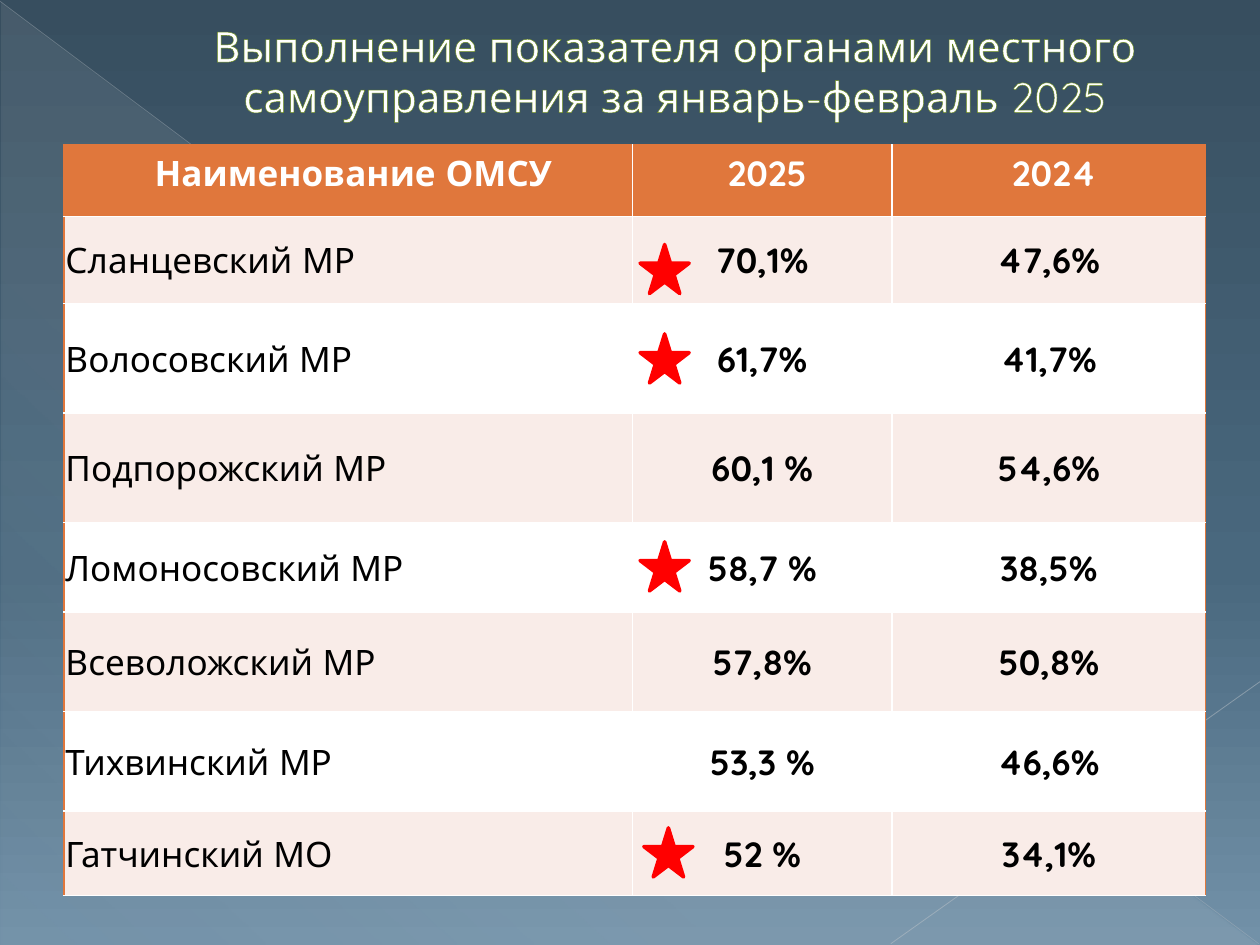
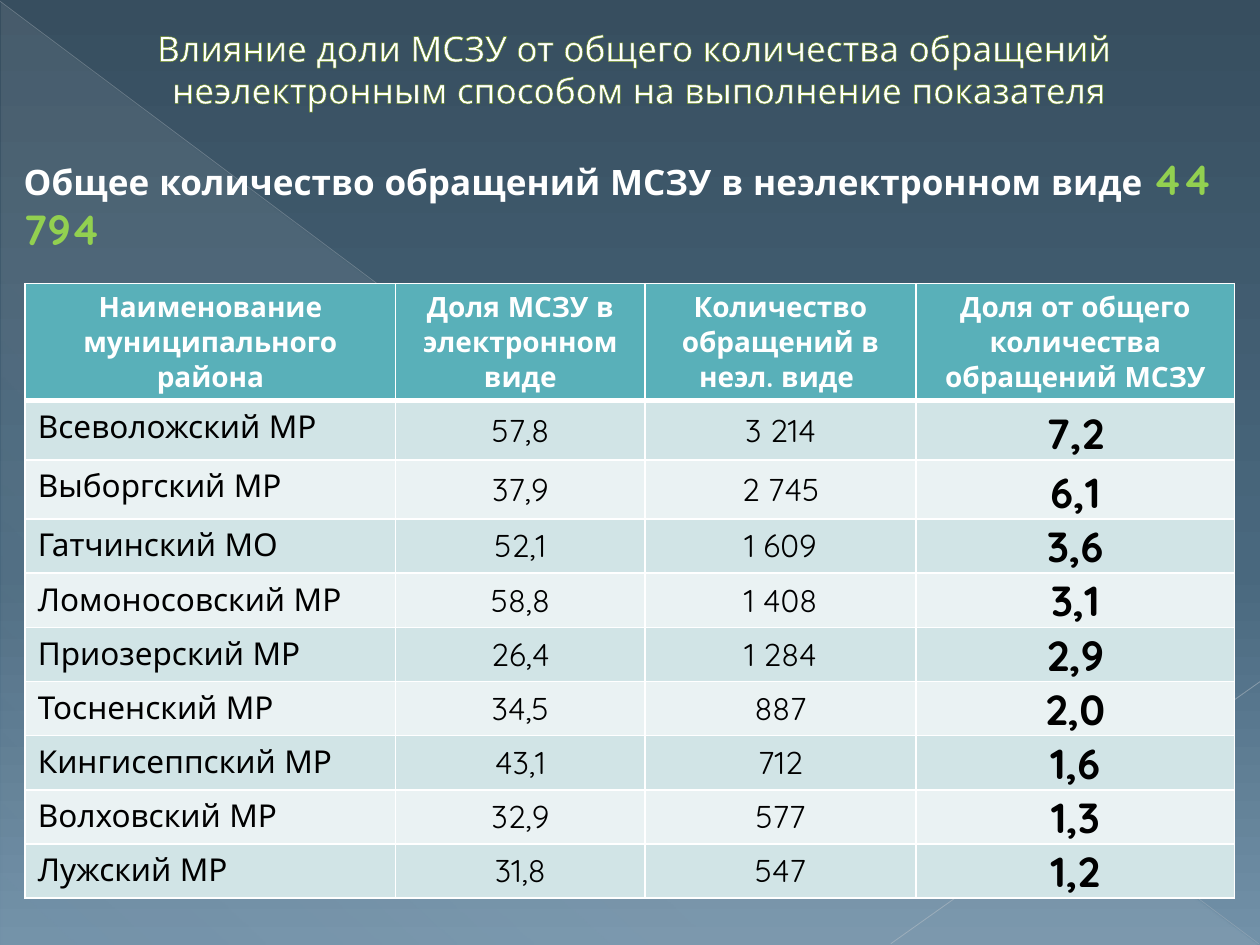
from collections import namedtuple

from lxml import etree
from pptx import Presentation
from pptx.dml.color import RGBColor
from pptx.enum import shapes, text
from pptx.oxml import parse_xml
from pptx.oxml.ns import nsdecls, qn
from pptx.util import Inches, Pt

FONT = "Quicksand"
WHITE = RGBColor(0xFF, 0xFF, 0xFF)
BLACK = RGBColor(0x00, 0x00, 0x00)
RED = RGBColor(0xFF, 0x00, 0x00)
LIME = RGBColor(0x92, 0xD0, 0x50)
OLIVE = RGBColor(0x69, 0x8A, 0x18)
ORANGE = RGBColor(0xE0, 0x77, 0x3C)
BLUSH = RGBColor(0xF9, 0xEC, 0xE8)
TEAL = RGBColor(0x59, 0xB0, 0xB9)
TEAL_MID = RGBColor(0xD1, 0xE4, 0xE6)
TEAL_PALE = RGBColor(0xEA, 0xF2, 0xF3)
NAVY = RGBColor(0x37, 0x4E, 0x5F)
STEEL = RGBColor(0x49, 0x68, 0x7E)
SKY = RGBColor(0x72, 0x91, 0xA8)
MIST = RGBColor(0xE7, 0xEC, 0xED)
RAY_LONG = RGBColor(0xBA, 0xC0, 0xC6)
RAY_SHORT = RGBColor(0xC2, 0xC7, 0xCC)

LEFT, CENTER = text.PP_ALIGN.LEFT, text.PP_ALIGN.CENTER
TOP, MIDDLE, BOTTOM = (text.MSO_ANCHOR.TOP, text.MSO_ANCHOR.MIDDLE,
                       text.MSO_ANCHOR.BOTTOM)

# How the body cells of one column look
Column = namedtuple("Column", "width align anchor size bold tight")


class Deck:
    def __init__(self):
        self.presentation = Presentation()
        self.presentation.slide_width = Inches(10)
        self.presentation.slide_height = Inches(7.5)
        self.slide = None

    def new_slide(self):
        layout = self.presentation.slide_layouts.get_by_name("Title Only")
        self.slide = self.presentation.slides.add_slide(layout)

    # Colour helpers
    def set_gradient(self, fill, stops, angle):
        """Each stop is (position %, colour, opacity %)."""
        fill.gradient()
        fill.gradient_angle = 0
        gradient = fill._fill._gradFill
        stop_list = gradient.find(qn("a:gsLst"))
        for old_stop in list(stop_list):
            stop_list.remove(old_stop)
        for position, color, opacity in stops:
            stop_list.append(parse_xml(
                f'<a:gs {nsdecls("a")} pos="{position * 1000}"><a:srgbClr val="{color}">'
                f'<a:alpha val="{opacity * 1000}"/></a:srgbClr></a:gs>'))
        gradient.find(qn("a:lin")).set("ang", str(angle * 60000))

    def set_font(self, font, size, color, bold=False):
        font.name, font.size, font.bold = FONT, Pt(size), bold
        font.color.rgb = color

    # Master: background, corner triangle and rays
    def decorate_master(self):
        master = self.presentation.slide_master
        self.set_gradient(master.background.fill,
                          [(0, NAVY, 100), (60, STEEL, 100), (100, SKY, 100)], 90)
        triangle = self.slide.shapes.add_shape(
            shapes.MSO_SHAPE.RIGHT_TRIANGLE, Inches(0.01), Inches(0.02),
            Inches(9.98), Inches(7.48))
        triangle.shadow.inherit = False
        triangle.line.fill.background()
        self.set_gradient(triangle.fill, [(0, MIST, 10), (70, MIST, 8), (100, MIST, 1)], 133)
        decorations = [
            triangle,
            self.ray((0, 0.01), (9.99, 7.49), RAY_LONG, 0.39, 35),
            self.ray((10, 5.41), (7.07, 7.49), RAY_SHORT, 0.47, 45),
        ]
        tree = master.shapes.element
        for number, shape in enumerate(decorations):
            shape.element.xpath(".//p:cNvPr")[0].set("id", str(100 + number))
            tree.insert(2 + number, shape.element)

    def ray(self, start, end, color, width, opacity):
        line = self.slide.shapes.add_connector(
            shapes.MSO_CONNECTOR.STRAIGHT, *(Inches(value) for value in start + end))
        line.line.color.rgb = color
        line.line.width = Pt(width)
        solid_color = line.element.spPr.find(".//" + qn("a:srgbClr"))
        etree.SubElement(solid_color, qn("a:alpha"), val=str(opacity * 1000))
        etree.SubElement(line.element.spPr, qn("a:effectLst"))
        return line

    # Text
    def title(self, words, left, top, width, height, size):
        shape = self.slide.shapes.title
        shape.left, shape.top = Inches(left), Inches(top)
        shape.width, shape.height = Inches(width), Inches(height)
        frame = shape.text_frame
        frame.text = words
        frame.auto_size = text.MSO_AUTO_SIZE.NONE
        frame.vertical_anchor = MIDDLE
        paragraph = frame.paragraphs[0]
        paragraph.alignment = CENTER
        paragraph._p.get_or_add_pPr().set("marL", str(Inches(0.53)))
        for run in paragraph.runs:
            self.set_font(run.font, size, WHITE)
            run._r.get_or_add_rPr().insert(0, parse_xml(
                f'<a:ln {nsdecls("a")} w="{Pt(0.5)}"><a:solidFill>'
                f'<a:srgbClr val="{OLIVE}"/></a:solidFill></a:ln>'))

    def text_line(self, runs, left, top, width, height):
        box = self.slide.shapes.add_textbox(
            Inches(left), Inches(top), Inches(width), Inches(height))
        box.text_frame.word_wrap = True
        paragraph = box.text_frame.paragraphs[0]
        for words, size, color in runs:
            run = paragraph.add_run()
            run.text = words
            self.set_font(run.font, size, color, bold=True)

    # Stars
    def star(self, left, top):
        shape = self.slide.shapes.add_shape(
            shapes.MSO_SHAPE.STAR_5_POINT, Inches(left), Inches(top),
            Inches(0.39), Inches(0.39))
        shape.shadow.inherit = False
        shape.fill.solid()
        shape.fill.fore_color.rgb = RED
        shape.line.color.rgb = RED
        shape.line.width = Pt(2)

    # Tables
    def cell(self, cell, words, style, color, fill, borders, indent=0):
        cell.text = words
        cell.vertical_anchor = style.anchor
        if style.tight:
            cell.margin_left = cell.margin_right = cell.margin_top = Inches(0.01)
            cell.margin_bottom = 0
        paragraph = cell.text_frame.paragraphs[0]
        paragraph.alignment = style.align
        if indent:
            paragraph._p.get_or_add_pPr().set("marL", str(Inches(indent)))
        self.set_font(paragraph.font, style.size, color, style.bold)
        for run in paragraph.runs:
            self.set_font(run.font, style.size, color, style.bold)
        cell.fill.solid()
        cell.fill.fore_color.rgb = fill
        for place, side in enumerate("LRTB"):
            edge_color, width = borders.get(side, (WHITE, 1))
            cell._tc.get_or_add_tcPr().insert(place, parse_xml(
                f'<a:ln{side} {nsdecls("a")} w="{Pt(width)}"><a:solidFill>'
                f'<a:srgbClr val="{edge_color}"/></a:solidFill></a:ln{side}>'))

    def table(self, left, top, columns, heights, rows, header_size, header_fill,
              bands, edge=WHITE, header_rule=1, header_indent=0):
        width = sum(column.width for column in columns)
        table = self.slide.shapes.add_table(
            len(rows), len(columns), Inches(left), Inches(top),
            Inches(width), Inches(sum(heights))).table
        table.first_row = table.horz_banding = False
        for column, style in zip(table.columns, columns):
            column.width = Inches(style.width)
        for row, height in zip(table.rows, heights):
            row.height = Inches(height)
        last = len(columns) - 1
        for r, row in enumerate(rows):
            for c, words in enumerate(row):
                borders = {}
                if c == 0:
                    borders["L"] = edge, 1
                if c == last:
                    borders["R"] = edge, 1
                if r == 0:
                    borders.update(T=(edge, 1), B=(WHITE, header_rule))
                    style = Column(None, CENTER, TOP, header_size, True, False)
                    self.cell(table.cell(r, c), words, style, WHITE, header_fill,
                              borders, header_indent)
                else:
                    if r == 1:
                        borders["T"] = WHITE, header_rule
                    self.cell(table.cell(r, c), words, columns[c], BLACK,
                              bands[(r - 1) % 2], borders)


def results_slide(deck):
    deck.title("Выполнение показателя органами местного самоуправления "
               "за январь-февраль 2025", 0.59, -0.19, 9, 1.5, 24)
    rows = [
        ("Наименование ОМСУ", "2025", "2024"),
        ("Сланцевский МР", "70,1%", "47,6%"),
        ("Волосовский МР", "61,7%", "41,7%"),
        ("Подпорожский МР", "60,1 %", "54,6%"),
        ("Ломоносовский МР", "58,7 %", "38,5%"),
        ("Всеволожский МР", "57,8%", "50,8%"),
        ("Тихвинский МР", "53,3 %", "46,6%"),
        ("Гатчинский МО", "52 %", "34,1%"),
    ]
    columns = [Column(4.51, LEFT, MIDDLE, 20, False, True),
               Column(2.06, CENTER, MIDDLE, 20, True, True),
               Column(2.49, CENTER, MIDDLE, 20, True, True)]
    heights = [0.57, 0.69, 0.87, 0.87, 0.71, 0.79, 0.79, 0.67]
    deck.table(0.51, 1.15, columns, heights, rows, 20, ORANGE, (BLUSH, WHITE),
               edge=ORANGE, header_indent=0.08)
    for left, top in [(5.08, 1.94), (5.08, 2.65), (5.08, 4.3), (5.11, 6.57)]:
        deck.star(left, top)


def influence_slide(deck):
    deck.title("Влияние доли МСЗУ от общего количества обращений \v"
               "неэлектронным способом на выполнение показателя",
               0.12, -0.34, 9.37, 1.77, 20)
    deck.text_line([("Общее количество обращений МСЗУ в неэлектронном виде ", 20, WHITE),
                    ("44 794", 24, LIME)], 0.09, 1.17, 10.03, 0.5)
    rows = [
        ("Наименование муниципального района", "Доля МСЗУ в электронном виде",
         "Количество обращений в неэл. виде ", "Доля от общего количества обращений МСЗУ"),
        ("Всеволожский МР", "57,8", "3 214", "7,2"),
        ("Выборгский МР", "37,9", "2 745", "6,1"),
        ("Гатчинский МО", "52,1", "1 609", "3,6"),
        ("Ломоносовский МР", "58,8", "1 408", "3,1"),
        ("Приозерский МР", "26,4", "1 284", "2,9"),
        ("Тосненский МР", "34,5", "887", "2,0"),
        ("Кингисеппский МР", "43,1", "712", "1,6"),
        ("Волховский МР", "32,9", "577", "1,3"),
        ("Лужский МР", "31,8", "547", "1,2"),
    ]
    columns = [Column(2.94, LEFT, TOP, 18, False, False),
               Column(1.98, CENTER, MIDDLE, 18, False, False),
               Column(2.15, CENTER, MIDDLE, 18, False, False),
               Column(2.53, CENTER, BOTTOM, 24, True, True)]
    heights = [0.93] + [0.47] * 2 + [0.43] * 7
    deck.table(0.2, 2.25, columns, heights, rows, 16, TEAL, (TEAL_MID, TEAL_PALE),
               header_rule=3)


def main():
    deck = Deck()
    deck.new_slide()
    deck.decorate_master()
    results_slide(deck)
    deck.new_slide()
    influence_slide(deck)
    deck.presentation.save("out.pptx")


if __name__ == "__main__":
    main()
